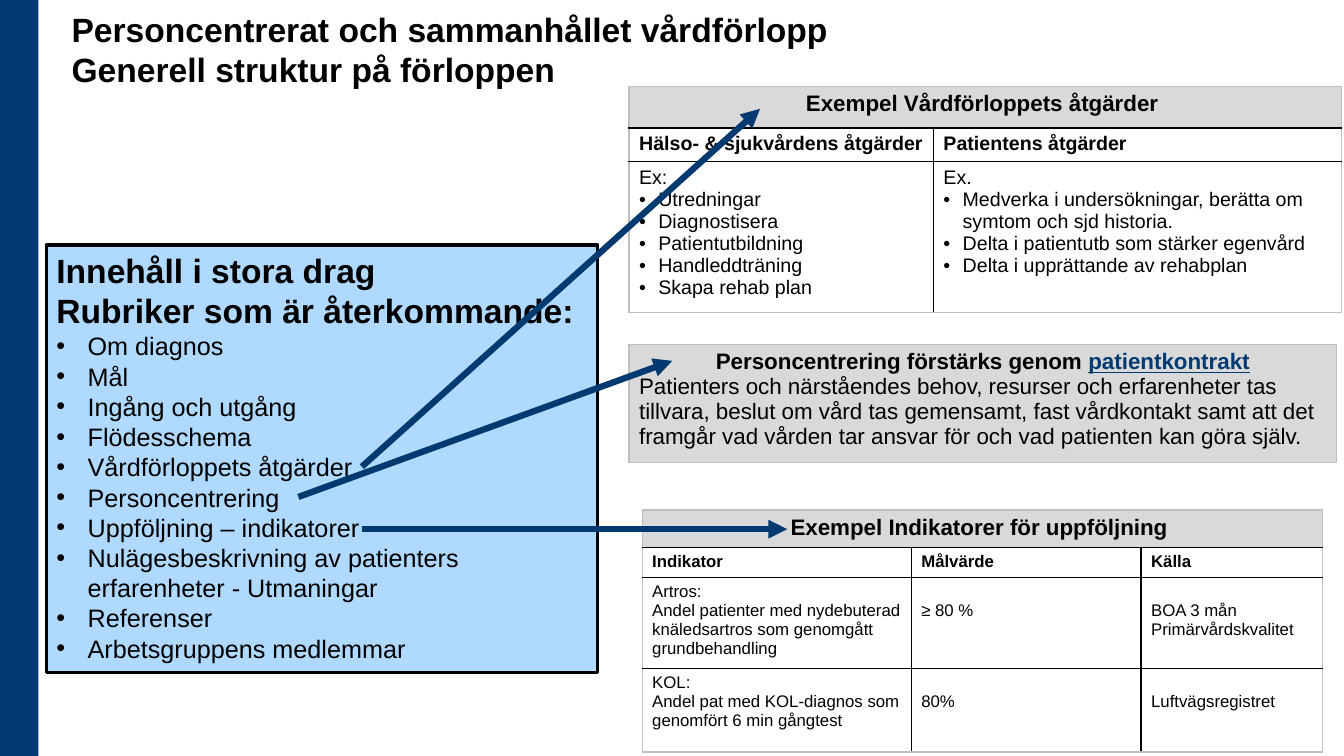
from lxml import etree
from pptx import Presentation
from pptx.dml.color import RGBColor
from pptx.enum.shapes import MSO_CONNECTOR, MSO_SHAPE
from pptx.enum.text import MSO_ANCHOR, MSO_AUTO_SIZE, PP_ALIGN
from pptx.oxml.ns import qn
from pptx.util import Inches, Pt

LEFT, CENTER = PP_ALIGN.LEFT, PP_ALIGN.CENTER
MIDDLE, TOP = MSO_ANCHOR.MIDDLE, MSO_ANCHOR.TOP
NO_FIT = MSO_AUTO_SIZE.NONE
RECTANGLE, STRAIGHT = MSO_SHAPE.RECTANGLE, MSO_CONNECTOR.STRAIGHT

GRID = 0.1
PAGE = (133.33, 75)
NAVY, SKY, GREY, EDGE = "003A70", "AFD9FF", "D9D9D9", "BFBFBF"
BLACK, WHITE = "000000", "FFFFFF"
BULLET = "• "
VALUE_TOP = 2.35

HEADINGS = ["Innehåll i stora drag", "Rubriker som är återkommande:"]
TOPICS = [
    "Om diagnos", "Mål", "Ingång och utgång", "Flödesschema",
    "Vårdförloppets åtgärder", "Personcentrering", "Uppföljning – indikatorer",
    "Nulägesbeskrivning av patienters erfarenheter - Utmaningar",
    "Referenser", "Arbetsgruppens medlemmar",
]
CARE_ACTIONS = ["Ex:", "• Utredningar", "• Diagnostisera", "• Patientutbildning",
                "• Handleddträning", "• Skapa rehab plan"]
PATIENT_ACTIONS = ["Ex.", "• Medverka i undersökningar, berätta om symtom och sjd historia.",
                   "• Delta i patientutb som stärker egenvård",
                   "• Delta i upprättande av rehabplan"]
INDICATORS = [
    [["Artros:", "Andel patienter med nydebuterad", "knäledsartros som genomgått",
      "grundbehandling"], ["≥ 80 %"], ["BOA 3 mån", "Primärvårdskvalitet"]],
    [["KOL:", "Andel pat med KOL-diagnos som genomfört 6 min gångtest"],
     ["80%"], ["Luftvägsregistret"]],
]
CONTRACT = ("Patienters och närståendes behov, resurser och erfarenheter tas tillvara, "
            "beslut om vård tas gemensamt, fast vårdkontakt samt att det framgår vad "
            "vården tar ansvar för och vad patienten kan göra själv.")


def units(*counts):
    return [Inches(count * GRID) for count in counts]


def color(value):
    return RGBColor.from_string(value)


def style_run(span, size, bold=False, shade=BLACK):
    span.font.name = "Arial"
    span.font.size = Pt(size)
    span.font.bold = bold
    span.font.color.rgb = color(shade)


def format_para(para, size, bold, align=LEFT, indent=0):
    properties = para._p.get_or_add_pPr()
    hang = Inches(indent * GRID)
    properties.set("marL", str(hang))
    properties.set("indent", str(-hang))
    if indent:
        etree.SubElement(properties, qn("a:buFont")).set("typeface", "Arial")
        etree.SubElement(properties, qn("a:buChar")).set("char", BULLET.strip())
    else:
        etree.SubElement(properties, qn("a:buNone"))
    para.alignment = align
    para.line_spacing = 1.0
    para.space_before = Pt(0)
    for span in para.runs:
        style_run(span, size, bold)


def place(shape, box):
    shape.left, shape.top, shape.width, shape.height = units(*box)


def add_side_bar(page, box):
    bar = page.shapes.add_shape(RECTANGLE, *units(*box))
    bar.shadow.inherit = False
    bar.fill.solid()
    bar.fill.fore_color.rgb = color(NAVY)
    bar.line.fill.background()


def fill_title(title, box):
    place(title, box)
    frame = title.text_frame
    frame.text = "Personcentrerat och sammanhållet vårdförlopp\vGenerell struktur på förloppen"
    frame.auto_size = NO_FIT
    frame.vertical_anchor = MIDDLE
    format_para(frame.paragraphs[0], 24, True)


def fill_contents(body, box):
    place(body, box)
    body.fill.solid()
    body.fill.fore_color.rgb = color(SKY)
    body.line.color.rgb = color(BLACK)
    body.line.width = Pt(2.25)
    frame = body.text_frame
    frame.text = "\n".join(HEADINGS + TOPICS)
    frame.auto_size = NO_FIT
    frame.vertical_anchor = TOP
    for index, para in enumerate(frame.paragraphs):
        if index < len(HEADINGS):
            format_para(para, 24, True)
        else:
            format_para(para, 18, False, indent=3.1)


def draw_borders(cell, edges):
    properties = cell._tc.get_or_add_tcPr()
    for index, (side, outer) in enumerate(edges):
        line = etree.Element(qn("a:ln" + side), w=str(Pt(1)))
        fill = etree.SubElement(line, qn("a:solidFill"))
        etree.SubElement(fill, qn("a:srgbClr")).set("val", EDGE if outer else BLACK)
        properties.insert(index, line)


def write_cell(cell, lines, size, bold=False, align=LEFT):
    frame = cell.text_frame
    frame.text = "\n".join(line.removeprefix(BULLET) for line in lines)
    for para, line in zip(frame.paragraphs, lines):
        indent = 1.9 if line.startswith(BULLET) else 0
        format_para(para, size, bold, align, indent)


def add_grid(page, corner, columns, rows):
    box = (*corner, sum(columns), sum(rows))
    grid = page.shapes.add_table(len(rows), len(columns), *units(*box)).table
    grid.first_row = grid.horz_banding = False
    for column, width in zip(grid.columns, units(*columns)):
        column.width = width
    for row, height in zip(grid.rows, units(*rows)):
        row.height = height
    last_row, last_column = len(rows) - 1, len(columns) - 1
    for r in range(len(rows)):
        for c in range(len(columns)):
            cell = grid.cell(r, c)
            cell.fill.solid()
            cell.fill.fore_color.rgb = color(WHITE if r else GREY)
            draw_borders(cell, [("L", r == 0 or c == 0), ("R", r == 0 or c == last_column),
                                ("T", r == 0), ("B", r == last_row)])
    if last_column:
        grid.cell(0, 0).merge(grid.cell(0, last_column))
    return grid


def add_actions(page, corner):
    grid = add_grid(page, corner, [30.2, 40.5], [4.1, 3.3, 15])
    write_cell(grid.cell(0, 0), ["Exempel Vårdförloppets åtgärder "], 16, True, CENTER)
    headers = ["Hälso- & sjukvårdens åtgärder", "Patientens åtgärder"]
    for c, (header, actions) in enumerate(zip(headers, [CARE_ACTIONS, PATIENT_ACTIONS])):
        write_cell(grid.cell(1, c), [header], 14, True)
        write_cell(grid.cell(2, c), actions, 14)


def add_indicators(page, corner):
    grid = add_grid(page, corner, [26.7, 22.8, 18], [3.7, 3, 9, 8.3])
    write_cell(grid.cell(0, 0), ["Exempel Indikatorer för uppföljning "], 16, True, CENTER)
    for c, header in enumerate(["Indikator", "Målvärde", "Källa"]):
        write_cell(grid.cell(1, c), [header], 12, True)
    for r, record in enumerate(INDICATORS, 2):
        for c, lines in enumerate(record):
            cell = grid.cell(r, c)
            write_cell(cell, lines, 12)
            if c:
                cell.margin_top = Inches(VALUE_TOP * GRID)


def add_contract(page, corner):
    cell = add_grid(page, corner, [70.2], [11.7]).cell(0, 0)
    write_cell(cell, ["Personcentrering förstärks genom ", CONTRACT], 16)
    heading = cell.text_frame.paragraphs[0]
    heading.alignment = CENTER
    heading.runs[0].font.bold = True
    link = heading.add_run()
    link.text = "patientkontrakt"
    style_run(link, 16, True, NAVY)
    link.font.underline = True


def add_arrow(page, start, end):
    arrow = page.shapes.add_connector(STRAIGHT, *units(*start, *end))
    arrow.line.color.rgb = color(NAVY)
    arrow.line.width = Pt(4.5)
    etree.SubElement(arrow.line._get_or_add_ln(), qn("a:tailEnd")).set("type", "triangle")
    etree.SubElement(arrow._element.spPr, qn("a:effectLst"))


def main():
    deck = Presentation()
    deck.slide_width, deck.slide_height = units(*PAGE)
    page = deck.slides.add_slide(deck.slide_layouts[1])
    add_side_bar(page, (0, 0, 3.8, PAGE[1]))
    fill_title(page.shapes.title, (6.1, 0.6, 121.1, 8.5))
    fill_contents(page.placeholders[1], (4.6, 24.3, 54.7, 42.4))
    add_actions(page, (62.4, 8.6))
    add_contract(page, (62.4, 34.2))
    add_indicators(page, (63.7, 50.6))
    add_arrow(page, (35.9, 46.3), (75.4, 10.8))
    add_arrow(page, (29.6, 49.3), (66.7, 35.8))
    add_arrow(page, (35.9, 52.5), (78.1, 52.5))
    deck.save("out.pptx")


if __name__ == "__main__":
    main()
